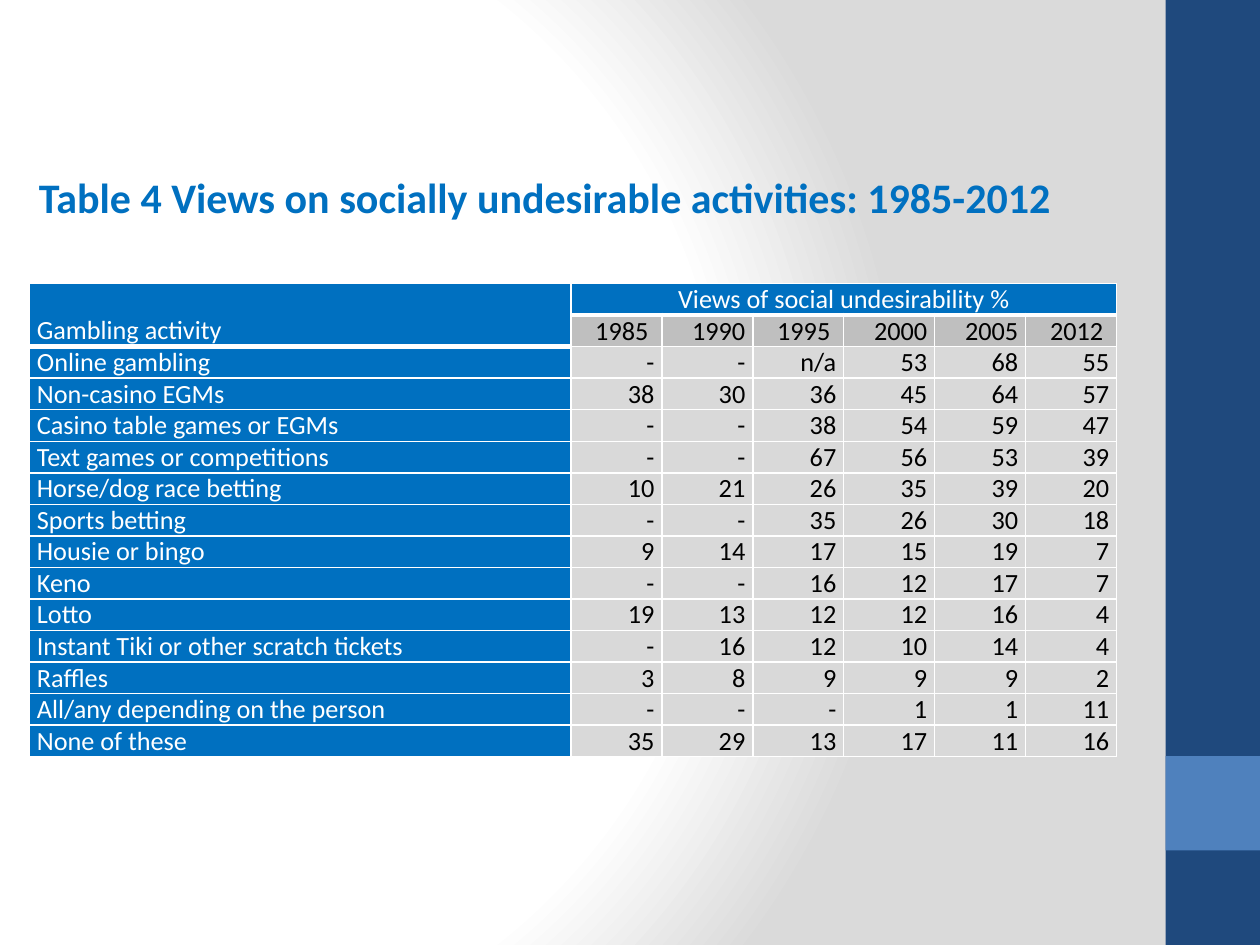
from pptx import Presentation
from pptx.dml.color import RGBColor
from pptx.enum.shapes import MSO_SHAPE as Shape
from pptx.enum.text import MSO_ANCHOR as Anchor, MSO_AUTO_SIZE as Auto, PP_ALIGN as Align
from pptx.oxml import parse_xml
from pptx.oxml.ns import nsdecls
from pptx.util import Pt

WHITE = RGBColor(0xFF, 0xFF, 0xFF)
BLACK = RGBColor(0, 0, 0)
BLUE = RGBColor(0x00, 0x70, 0xC0)
NAVY = RGBColor(0x1F, 0x49, 0x7D)
STEEL = RGBColor(0x4F, 0x81, 0xBD)
GREY = RGBColor(0xBF, 0xBF, 0xBF)
PALE = RGBColor(0xD9, 0xD9, 0xD9)
EDGE = RGBColor(0xDA, 0xDA, 0xDA)

HEAD = "Views of social undesirability %"
YEARS = ["1985 ", "1990", "1995 ", "2000", "2005", "2012 "]
VIEWS = [
    ("Online gambling", "- - n/a 53 68 55"),
    ("Non-casino EGMs", "38 30 36 45 64 57"),
    ("Casino table games or EGMs", "- - 38 54 59 47"),
    ("Text games or competitions", "- - 67 56 53 39"),
    ("Horse/dog race betting", "10 21 26 35 39 20"),
    ("Sports betting", "- - 35 26 30 18"),
    ("Housie or bingo", "9 14 17 15 19 7"),
    ("Keno", "- - 16 12 17 7"),
    ("Lotto", "19 13 12 12 16 4"),
    ("Instant Tiki or other scratch tickets", "- 16 12 10 14 4"),
    ("Raffles", "3 8 9 9 9 2"),
    ("All/any depending on the person", "- - - 1 1 11"),
    ("None of these", "35 29 13 17 11 16"),
]


def write(frame, text, font="Calibri", size=15, color=BLACK, bold=False,
          align=Align.LEFT, before=0, after=0):
    para = frame.paragraphs[0]
    para.alignment = align
    para.space_before, para.space_after = Pt(before), Pt(after)
    run = para.add_run()
    run.text = text
    run.font.name, run.font.size, run.font.bold = font, Pt(size), bold
    run.font.color.rgb = color


def border(cell, side, width):
    """Draw one white edge; call before the cell gets its fill."""
    cell._tc.get_or_add_tcPr().append(parse_xml(
        f'<a:ln{side} {nsdecls("a")} w="{Pt(width)}"><a:solidFill>'
        f'<a:srgbClr val="{WHITE}"/></a:solidFill></a:ln{side}>'))


class Deck:
    def __init__(self, font="Calibri"):
        self.font = font
        self.file = Presentation()
        self.file.slide_width, self.file.slide_height = Pt(720), Pt(540)
        self.slide = self.file.slides.add_slide(self.file.slide_layouts[5])

    def glow(self, inner, outer):
        """Fill the background with a round gradient, plain for three quarters."""
        fill = self.slide.background.fill
        fill.solid()
        stops = "".join(
            f'<a:gs pos="{pos * 1000}"><a:srgbClr val="{color}"/></a:gs>'
            for pos, color in [(0, inner), (75, inner), (100, outer)])
        grad = parse_xml(
            f'<a:gradFill {nsdecls("a")} rotWithShape="1"><a:gsLst>{stops}</a:gsLst>'
            '<a:path path="circle"><a:fillToRect l="20000" t="50000" r="100000" '
            'b="50000"/></a:path></a:gradFill>')
        back = self.slide.background._cSld.bg.bgPr
        back.replace(back[0], grad)

    def rect(self, x, y, w, h, color):
        box = self.slide.shapes.add_shape(Shape.RECTANGLE, Pt(x), Pt(y), Pt(w), Pt(h))
        box.shadow.inherit = False
        box.fill.solid()
        box.fill.fore_color.rgb = color
        box.line.fill.background()

    def title(self, text, x, y, w, h):
        box = self.slide.shapes.title
        box.left, box.top, box.width, box.height = Pt(x), Pt(y), Pt(w), Pt(h)
        frame = box.text_frame
        frame.word_wrap = True
        frame.auto_size = Auto.SHAPE_TO_FIT_TEXT
        frame.vertical_anchor = Anchor.TOP
        write(frame, text, font=self.font, size=24, color=BLUE, bold=True)

    def table(self, rows, x, y, widths, high):
        grid = self.slide.shapes.add_table(
            len(rows), len(widths), Pt(x), Pt(y),
            Pt(sum(widths)), Pt(high * len(rows))).table
        grid.horz_banding = grid.first_row = False
        for col, width in zip(grid.columns, widths):
            col.width = Pt(width)
        for row in grid.rows:
            row.height = Pt(high)
        grid.cell(0, 0).merge(grid.cell(1, 0))
        grid.cell(0, 1).merge(grid.cell(0, len(widths) - 1))
        for r, row in enumerate(rows):
            for c, text in enumerate(row):
                self.cell(grid.cell(r, c), text, r, c)

    def cell(self, cell, text, r, c):
        label = r == 0 or c == 0
        for side in "LRTB":
            border(cell, side, 3 if r == 0 and side == "B" else 1)
        cell.fill.solid()
        cell.fill.fore_color.rgb = BLUE if label else GREY if r == 1 else PALE
        cell.margin_left = cell.margin_right = Pt(4.3)
        cell.margin_top = cell.margin_bottom = 0
        if cell.is_spanned:
            return
        if r == c == 0:
            cell.vertical_anchor = Anchor.BOTTOM
        elif r > 1 and c > 0:
            cell.vertical_anchor = Anchor.MIDDLE
        else:
            cell.vertical_anchor = Anchor.TOP
        align = Align.LEFT if c == 0 else Align.CENTER if r == 0 else Align.RIGHT
        write(cell.text_frame, text, font=self.font, color=WHITE if label else BLACK,
              align=align, before=3 if r == 2 else 0, after=1 if r < 2 else 0)


def main():
    deck = Deck()
    deck.glow(WHITE, EDGE)
    deck.rect(666, 0, 54, 540, NAVY)
    deck.rect(666, 432, 54, 54, STEEL)
    deck.title("Table 4 Views on socially undesirable activities: 1985-2012",
               15, 94.5, 604, 36)
    rows = [["Gambling activity", HEAD] + [""] * 5, [""] + YEARS]
    rows += [[name] + vals.split() for name, vals in VIEWS]
    deck.table(rows, 16.8, 162, [309.4] + [52] * 6, 18)
    deck.file.save("out.pptx")


if __name__ == "__main__":
    main()
